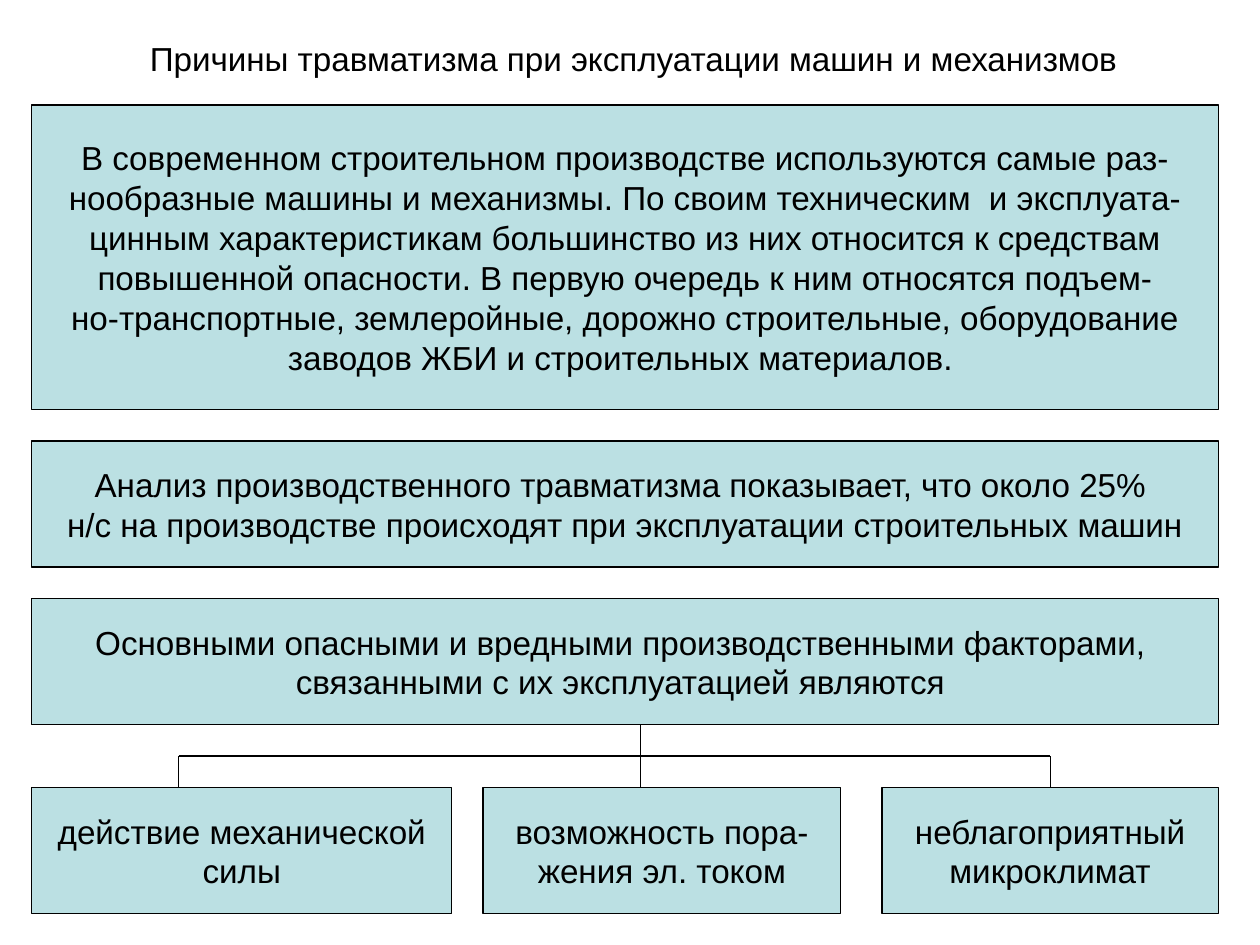
"""Build a slide on the causes of injuries when operating machines."""
from lxml.etree import SubElement
from pptx import Presentation
from pptx.dml.color import RGBColor
from pptx.enum.shapes import MSO_CONNECTOR as Connector, MSO_SHAPE as Shape
from pptx.enum.text import MSO_ANCHOR as Anchor, MSO_AUTO_SIZE as AutoSize, PP_ALIGN as Align
from pptx.oxml.ns import qn
from pptx.util import Cm, Pt

BLACK = RGBColor(0x00, 0x00, 0x00)
PALE_TEAL = RGBColor(0xBB, 0xE0, 0xE3)

LEFT, FULL_WIDTH, ROW_HEIGHT = 0.64, 23.92, 2.54
FACTOR_TOP, BRANCH_TOP, TRUNK_TOP = 15.88, 15.24, 14.61
BRANCH_LEFT, TRUNK_X, BRANCH_RIGHT = 3.6, 12.91, 21.17

TITLE = "Причины травматизма при эксплуатации машин и механизмов"

STATEMENTS = [
    (2.12, 6.14, [
        "В современном строительном производстве используются самые раз-",
        "нообразные машины и механизмы. По своим техническим  и эксплуата-",
        "цинным характеристикам большинство из них относится к средствам",
        "повышенной опасности. В первую очередь к ним относятся подъем-",
        "но-транспортные, землеройные, дорожно строительные, оборудование",
        "заводов ЖБИ и строительных материалов. ",
    ]),
    (8.89, ROW_HEIGHT, [
        "Анализ производственного травматизма показывает, что около 25% ",
        "н/с на производстве происходят при эксплуатации строительных машин",
    ]),
    (12.07, ROW_HEIGHT, [
        "Основными опасными и вредными производственными факторами, ",
        "связанными с их эксплуатацией являются ",
    ]),
]

FACTORS = [
    (LEFT, 8.47, ["действие механической", "силы"]),
    (9.74, 7.21, ["возможность пора-", "жения эл. током"]),
    (17.78, 6.78, ["неблагоприятный", "микроклимат"]),
]

LINKS = [
    (BRANCH_LEFT, BRANCH_TOP, BRANCH_RIGHT, BRANCH_TOP),
    (TRUNK_X, TRUNK_TOP, TRUNK_X, FACTOR_TOP),
    (BRANCH_LEFT, BRANCH_TOP, BRANCH_LEFT, FACTOR_TOP),
    (BRANCH_RIGHT, BRANCH_TOP, BRANCH_RIGHT, FACTOR_TOP),
]


def write_lines(frame, lines, align):
    frame.word_wrap = False
    frame.text = "\n".join(lines)
    for paragraph in frame.paragraphs:
        paragraph.alignment = align
        for run in paragraph.runs:
            run.font.name = "Arial"
            run.font.size = Pt(19)
            run.font.color.rgb = BLACK


def style_line(line):
    line.color.rgb = BLACK
    line.width = Pt(0.75)


def add_title(slide):
    title = slide.shapes.add_textbox(Cm(2.77), Cm(0.64), Cm(20.17), Cm(1.07))
    write_lines(title.text_frame, [TITLE], Align.LEFT)
    title.text_frame.auto_size = AutoSize.SHAPE_TO_FIT_TEXT


def add_box(slide, left, top, width, height, lines):
    box = slide.shapes.add_shape(Shape.RECTANGLE, Cm(left), Cm(top), Cm(width), Cm(height))
    box.shadow.inherit = False
    box.fill.solid()
    box.fill.fore_color.rgb = PALE_TEAL
    style_line(box.line)
    box.text_frame.vertical_anchor = Anchor.MIDDLE
    write_lines(box.text_frame, lines, Align.CENTER)


def add_link(slide, *ends):
    link = slide.shapes.add_connector(Connector.STRAIGHT, *map(Cm, ends))
    style_line(link.line)
    SubElement(link._element.spPr, qn("a:effectLst"))


def main():
    deck = Presentation()
    deck.slide_width, deck.slide_height = Cm(25.4), Cm(19.05)
    slide = deck.slides.add_slide(deck.slide_layouts[6])
    add_title(slide)
    for top, height, lines in STATEMENTS:
        add_box(slide, LEFT, top, FULL_WIDTH, height, lines)
    for left, width, lines in FACTORS:
        add_box(slide, left, FACTOR_TOP, width, ROW_HEIGHT, lines)
    for ends in LINKS:
        add_link(slide, *ends)
    deck.save("out.pptx")


if __name__ == "__main__":
    main()
